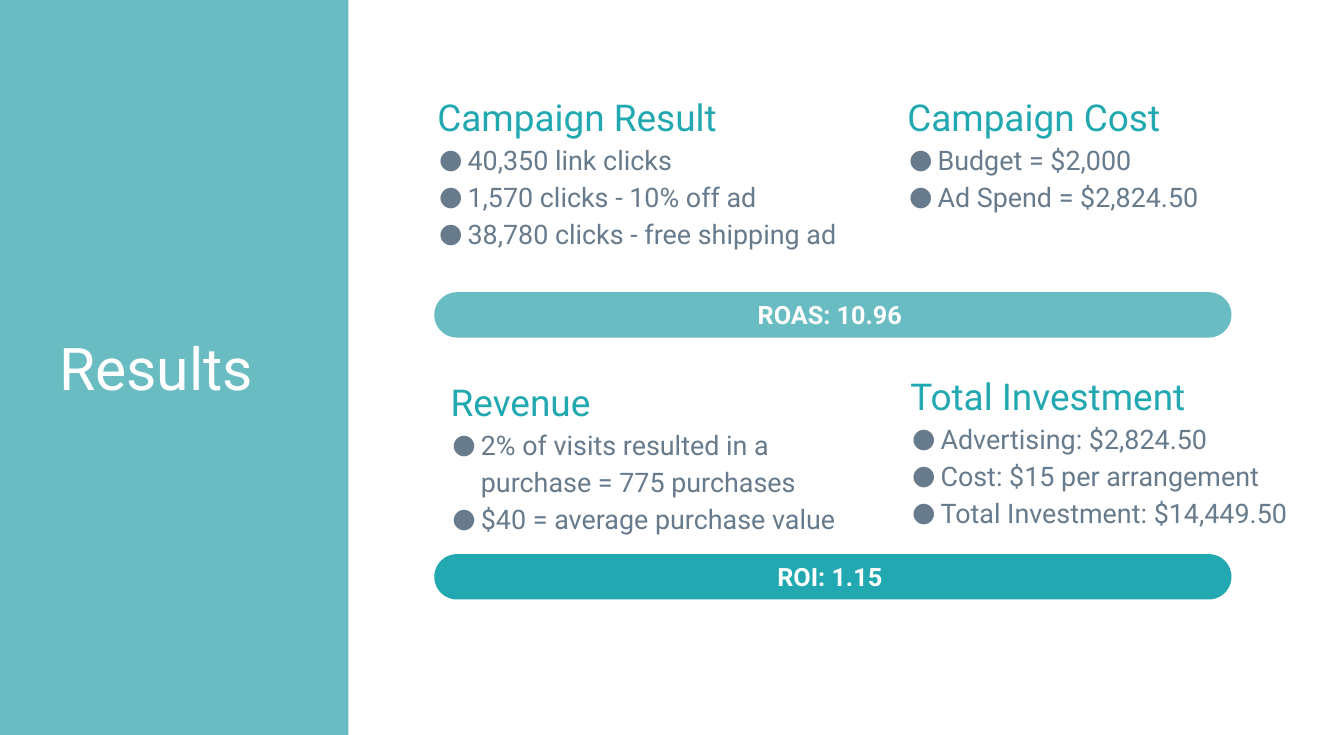
import pptx
import pptx.dml.color
import pptx.enum.shapes
import pptx.enum.text
import pptx.oxml
import pptx.oxml.ns
import pptx.util
from lxml import etree

ALIGN = pptx.enum.text.PP_ALIGN
ANCHOR = pptx.enum.text.MSO_ANCHOR
SHAPE = pptx.enum.shapes.MSO_SHAPE
EMU_PER_PX = 9144  # 100 px to the inch

LIGHT_TEAL, TEAL, SLATE, WHITE = "69BCC1", "21A8B0", "677B8C", "FFFFFF"


def px(length):
    return pptx.util.Emu(length * EMU_PER_PX)


def color(hex_string):
    return pptx.dml.color.RGBColor.from_string(hex_string)


def apply(target, values):
    for name, value in values.items():
        setattr(target, name, value)


def place(shape, left, top, width, height):
    apply(shape, dict(left=px(left), top=px(top), width=px(width), height=px(height)))


class ResultsSlide:
    font_name = "Roboto"
    inset = 22
    bullet = "●"
    bullet_indent = 50
    bullet_hang = 47

    def __init__(self, deck, layout_index):
        self.page = deck.slides.add_slide(deck.slide_layouts[layout_index])

    def frame(self, shape, anchor, right_inset=inset):
        frame = shape.text_frame
        apply(frame, dict(
            word_wrap=True, vertical_anchor=anchor,
            auto_size=pptx.enum.text.MSO_AUTO_SIZE.NONE,
            margin_left=px(self.inset), margin_top=px(self.inset),
            margin_right=px(right_inset), margin_bottom=px(self.inset)))
        return frame

    def add_text(self, para, text, size, hex_string, bold=False, align=ALIGN.LEFT, spacing=1.0):
        apply(para, dict(alignment=align, line_spacing=spacing, space_before=pptx.util.Pt(0)))
        span = para.add_run()
        span.text = text
        apply(span.font, dict(name=self.font_name, size=pptx.util.Pt(size), bold=bold))
        span.font.color.rgb = color(hex_string)

    def set_bullet(self, para, hex_string=None):
        """Give the paragraph a coloured hanging bullet, or none."""
        tag = pptx.oxml.ns.qn
        properties = para._p.get_or_add_pPr()
        if hex_string is None:
            properties.set("marL", "0")
            properties.set("indent", "0")
            etree.SubElement(properties, tag("a:buNone"))
            return
        properties.set("marL", str(px(self.bullet_indent)))
        properties.set("indent", str(px(-self.bullet_hang)))
        bullet_color = etree.SubElement(properties, tag("a:buClr"))
        etree.SubElement(bullet_color, tag("a:srgbClr"), val=hex_string)
        etree.SubElement(properties, tag("a:buFont"), typeface=self.font_name)
        etree.SubElement(properties, tag("a:buChar"), char=self.bullet)

    def block(self, kind, bounds, fill):
        shape = self.page.shapes.add_shape(kind, *map(px, bounds))
        shape.shadow.inherit = False
        shape.fill.solid()
        shape.fill.fore_color.rgb = color(fill)
        shape.line.fill.background()
        return shape

    def title(self, text, bounds):
        title = self.page.shapes.title
        place(title, *bounds)
        self.add_text(self.frame(title, ANCHOR.MIDDLE).paragraphs[0], text, 70, WHITE)

    def side_panel(self, bounds, fill):
        """Draw the panel behind the title."""
        panel = self.block(SHAPE.RECTANGLE, bounds, fill)
        self.page.shapes.title.element.addprevious(panel.element)

    def section(self, index, bounds, heading, items):
        body = self.page.placeholders[index]
        place(body, *bounds)
        frame = self.frame(body, ANCHOR.TOP)
        para = frame.paragraphs[0]
        self.set_bullet(para)
        self.add_text(para, heading, 44, TEAL, spacing=1.5)
        for item in items:
            para = frame.add_paragraph()
            self.set_bullet(para, SLATE)
            self.add_text(para, item, 32, SLATE, spacing=1.15)

    def banner(self, top, text, fill):
        pill = self.block(SHAPE.ROUNDED_RECTANGLE, (718, top, 1318, 75), fill)
        pill.adjustments[0] = 0.5
        frame = self.frame(pill, ANCHOR.MIDDLE, right_inset=self.inset + 10)
        apply(frame, dict(margin_top=0, margin_bottom=0))
        self.add_text(frame.paragraphs[0], text, 30, WHITE, bold=True, align=ALIGN.CENTER)


SECTIONS = [
    ((701, 97, 755, 370), "Campaign Result",
     ["40,350 link clicks", "1,570 clicks - 10% off ad", "38,780 clicks - free shipping ad"]),
    ((1478, 97, 670, 279), "Campaign Cost",
     ["Budget = $2,000", "Ad Spend = $2,824.50"]),
    ((723, 568, 755, 370), "Revenue",
     ["2% of visits resulted in a purchase = 775 purchases", "$40 = average purchase value"]),
    ((1483, 558, 739, 370), "Total Investment",
     ["Advertising: $2,824.50", "Cost: $15 per arrangement", "Total Investment: $14,449.50"]),
]


def main():
    deck = pptx.Presentation()
    apply(deck, dict(slide_width=px(2222), slide_height=px(1215)))
    results = ResultsSlide(deck, layout_index=4)  # title and four bodies
    results.side_panel((0, 0, 576, 1215), LIGHT_TEAL)
    results.title("Results", (76, 409, 453, 396))
    for index, (bounds, heading, items) in enumerate(SECTIONS, start=1):
        results.section(index, bounds, heading, items)
    results.banner(483, "ROAS: 10.96", LIGHT_TEAL)
    results.banner(916, "ROI: 1.15", TEAL)
    deck.save("out.pptx")


if __name__ == "__main__":
    main()
